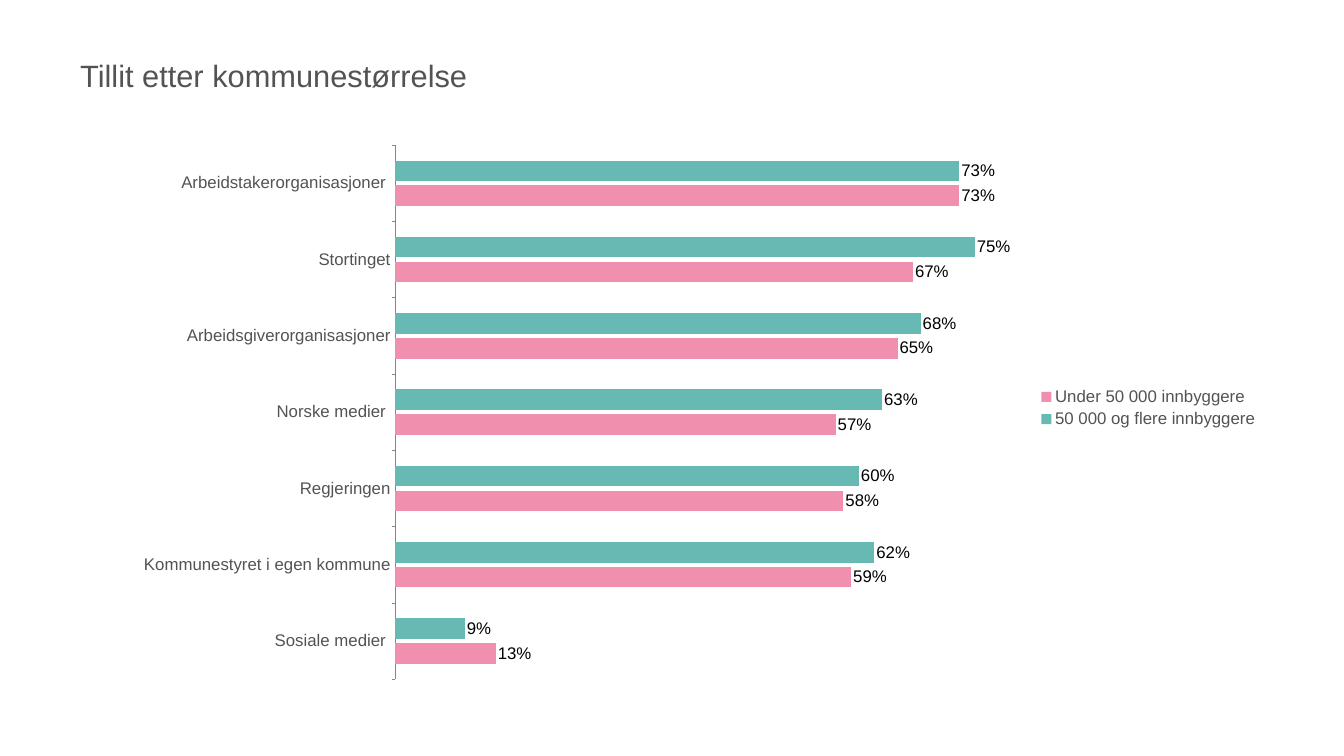
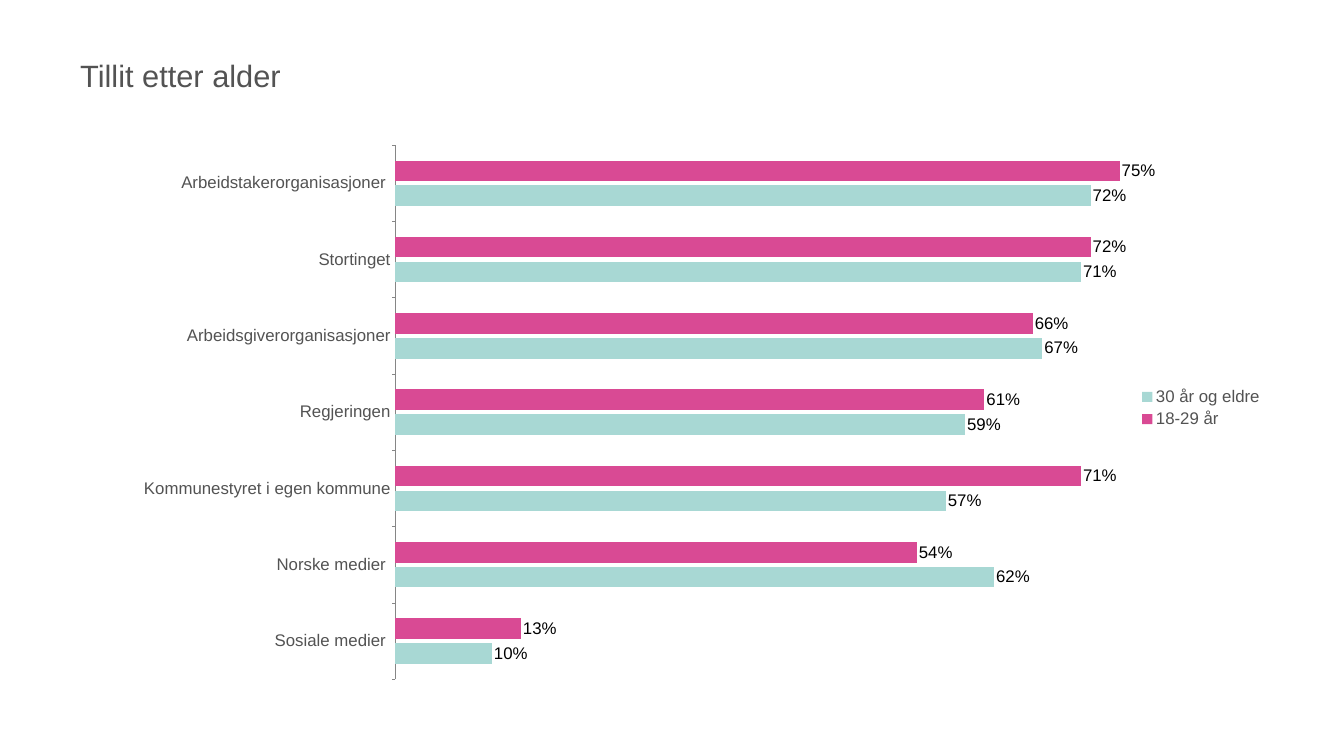
from lxml import etree
from pptx import Presentation
from pptx.chart.data import CategoryChartData
from pptx.dml.color import RGBColor
from pptx.enum.chart import XL_CHART_TYPE, XL_LABEL_POSITION, XL_LEGEND_POSITION, XL_TICK_MARK
from pptx.enum.text import MSO_ANCHOR
from pptx.oxml.ns import qn
from pptx.util import Inches, Pt

BAR_CLUSTERED = XL_CHART_TYPE.BAR_CLUSTERED
OUTSIDE_END = XL_LABEL_POSITION.OUTSIDE_END
LEGEND_RIGHT = XL_LEGEND_POSITION.RIGHT
TICK_OUTSIDE, TICK_NONE = XL_TICK_MARK.OUTSIDE, XL_TICK_MARK.NONE
MIDDLE = MSO_ANCHOR.MIDDLE

WHITE = RGBColor(0xFF, 0xFF, 0xFF)
BLACK = RGBColor(0x00, 0x00, 0x00)
GREY = RGBColor(0x53, 0x53, 0x53)
AXIS_GREY = RGBColor(0x86, 0x86, 0x86)
TEAL = RGBColor(0x66, 0xBA, 0xB3)
PINK = RGBColor(0xF1, 0x90, 0xAE)
MAGENTA = RGBColor(0xD9, 0x4A, 0x94)
LIGHT_TEAL = RGBColor(0xA8, 0xD8, 0xD4)

FONT = "Arial"
TITLE_SIZE, CHART_SIZE = Pt(44), Pt(24)
TITLE_BOX = (1.53, 0.47, 23.66, 2.04)
CHART_BOX = (1.53, 2.51, 23.66, 11.17)
PLOT_LAYOUT = {"x": 0.267, "y": 0.033, "w": 0.648, "h": 0.949}

WORKERS = "Arbeidstakerorganisasjoner "
PARLIAMENT = "Stortinget"
EMPLOYERS = "Arbeidsgiverorganisasjoner"
MEDIA = "Norske medier "
GOVERNMENT = "Regjeringen"
COUNCIL = "Kommunestyret i egen kommune"
SOCIAL_MEDIA = "Sosiale medier "

SLIDES = [
    {
        "title": "Tillit etter kommunestørrelse",
        "categories": [WORKERS, PARLIAMENT, EMPLOYERS, MEDIA, GOVERNMENT, COUNCIL, SOCIAL_MEDIA],
        "series": [
            ("50 000 og flere innbyggere ", TEAL, [0.73, 0.75, 0.68, 0.63, 0.60, 0.62, 0.09]),
            ("Under 50 000 innbyggere ", PINK, [0.73, 0.67, 0.65, 0.57, 0.58, 0.59, 0.13]),
        ],
        "maximum": 1,
    },
    {
        "title": "Tillit etter alder",
        "categories": [WORKERS, PARLIAMENT, EMPLOYERS, GOVERNMENT, COUNCIL, MEDIA, SOCIAL_MEDIA],
        "series": [
            ("18-29 år ", MAGENTA, [0.75, 0.72, 0.66, 0.61, 0.71, 0.54, 0.13]),
            ("30 år og eldre", LIGHT_TEAL, [0.72, 0.71, 0.67, 0.59, 0.57, 0.62, 0.10]),
        ],
        "maximum": 0.8,
    },
]


def set_attributes(target, values):
    for name, value in values.items():
        setattr(target, name, value)


def set_font(font, size, color):
    set_attributes(font, {"name": FONT, "size": size})
    font.color.rgb = color


def add_title(slide, box, text):
    frame = slide.shapes.add_textbox(*map(Inches, box)).text_frame
    margins = dict.fromkeys(("margin_left", "margin_top", "margin_right", "margin_bottom"), Inches(0.06))
    set_attributes(frame, {"word_wrap": True, "vertical_anchor": MIDDLE, **margins})
    run = frame.paragraphs[0].add_run()
    run.text = text
    set_font(run.font, TITLE_SIZE, GREY)


def place_plot(chart, layout):
    """Fix the inner plot area as fractions of the chart."""
    plot_area = chart.plots[0]._element.getparent()
    for old_layout in plot_area.findall(qn("c:layout")):
        plot_area.remove(old_layout)
    element = etree.Element(qn("c:layout"))
    manual = etree.SubElement(element, qn("c:manualLayout"))
    settings = {"layoutTarget": "inner", "xMode": "edge", "yMode": "edge", **layout}
    for name, value in settings.items():
        etree.SubElement(manual, qn(f"c:{name}")).set("val", str(value))
    plot_area.insert(0, element)


def format_axes(chart, maximum):
    category_axis = chart.category_axis
    set_attributes(category_axis, {
        "reverse_order": True,
        "major_tick_mark": TICK_OUTSIDE,
        "minor_tick_mark": TICK_NONE,
        "has_major_gridlines": False,
    })
    category_axis.format.line.color.rgb = AXIS_GREY
    set_font(category_axis.tick_labels.font, CHART_SIZE, GREY)
    set_attributes(chart.value_axis, {
        "visible": False,
        "has_major_gridlines": False,
        "minimum_scale": 0,
        "maximum_scale": maximum,
    })


def add_trust_chart(slide, box, categories, series, maximum):
    data = CategoryChartData(number_format="0%")
    data.categories = categories
    for name, _, values in series:
        data.add_series(name, values)
    chart = slide.shapes.add_chart(BAR_CLUSTERED, *map(Inches, box), data).chart
    set_attributes(chart, {"has_title": False, "has_legend": True})
    set_font(chart.font, Pt(10), BLACK)
    set_attributes(chart.legend, {"position": LEGEND_RIGHT, "include_in_layout": False})
    set_font(chart.legend.font, CHART_SIZE, GREY)

    plot = chart.plots[0]
    set_attributes(plot, {"gap_width": 150, "overlap": -20, "vary_by_categories": False})
    for bars, (_, color, _) in zip(plot.series, series):
        bars.format.fill.solid()
        bars.format.fill.fore_color.rgb = color
        labels = bars.data_labels
        set_attributes(labels, {
            "show_value": True,
            "position": OUTSIDE_END,
            "number_format": "0%",
            "number_format_is_linked": False,
        })
        set_font(labels.font, CHART_SIZE, BLACK)
    format_axes(chart, maximum)
    place_plot(chart, PLOT_LAYOUT)


def add_trust_slide(presentation, content):
    slide = presentation.slides.add_slide(presentation.slide_layouts[6])
    slide.background.fill.solid()
    slide.background.fill.fore_color.rgb = WHITE
    add_title(slide, TITLE_BOX, content["title"])
    add_trust_chart(slide, CHART_BOX, content["categories"], content["series"], content["maximum"])


def main():
    presentation = Presentation()
    set_attributes(presentation, {"slide_width": Inches(26.67), "slide_height": Inches(15)})
    for content in SLIDES:
        add_trust_slide(presentation, content)
    presentation.save("out.pptx")


if __name__ == "__main__":
    main()
